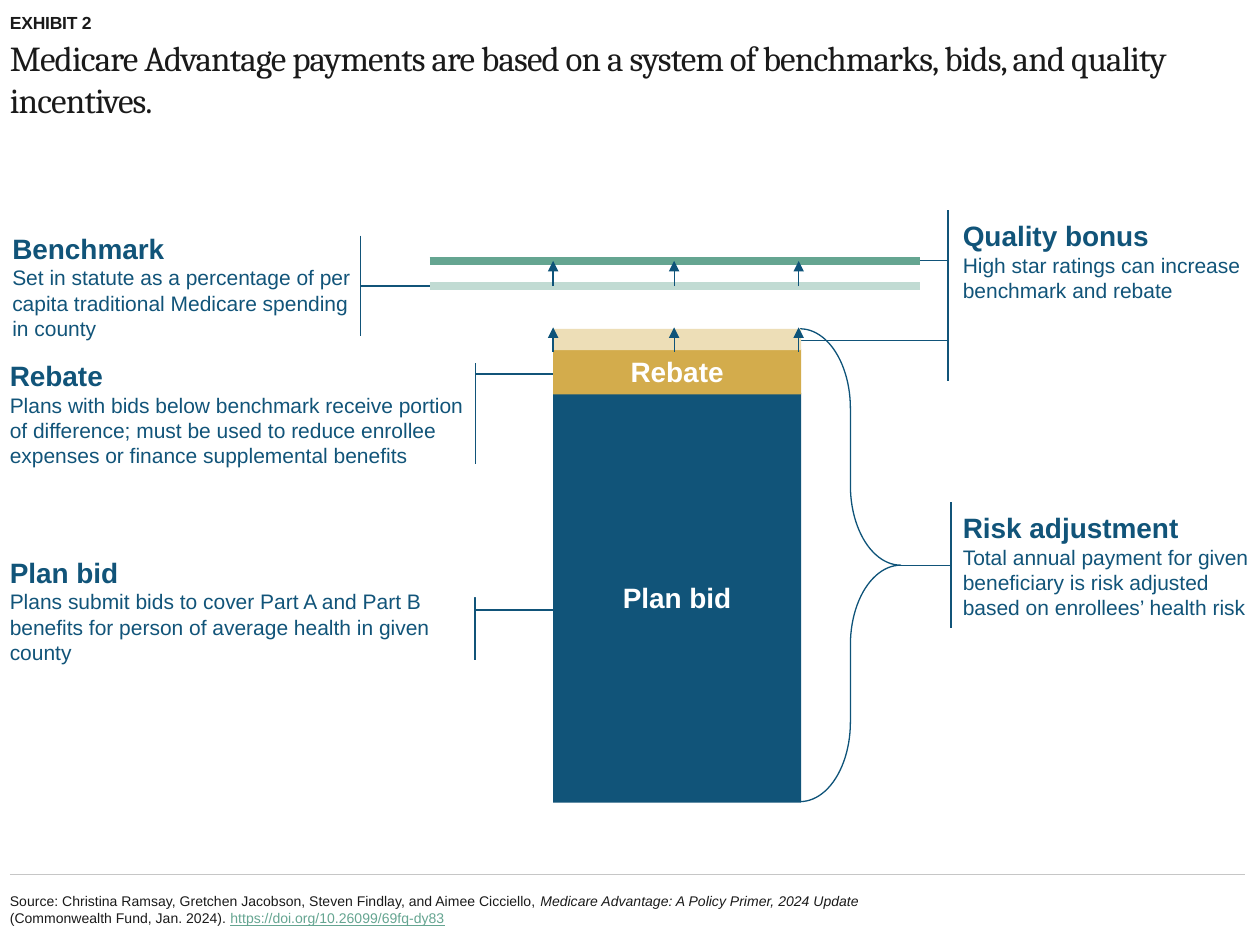
from dataclasses import dataclass
from typing import Optional

from pptx import Presentation
from pptx.dml.color import RGBColor
from pptx.enum.shapes import MSO_CONNECTOR, MSO_SHAPE
from pptx.enum.text import MSO_ANCHOR, MSO_AUTO_SIZE, PP_ALIGN
from pptx.oxml.ns import qn
from pptx.oxml.xmlchemy import OxmlElement
from pptx.util import Cm, Pt


@dataclass(frozen=True)
class Theme:
    sans: str = "Arial"
    serif: str = "Cambria"
    ink: str = "1A1A1A"
    navy: str = "115479"
    stroke: str = "0E5379"
    green: str = "65A591"
    pale_green: str = "C1DBD3"
    gold: str = "D3AC4C"
    pale_gold: str = "EDDEB7"
    white: str = "FFFFFF"
    rule: str = "C6C6C6"
    title_size: int = 20
    heading_size: int = 16
    text_size: int = 12
    exhibit_size: int = 10
    source_size: int = 8
    thin: float = 0.75
    thick: float = 4.5


THEME = Theme()


@dataclass(frozen=True)
class Area:
    left: float
    top: float
    width: float
    height: float

    def lengths(self) -> tuple:
        return Cm(self.left), Cm(self.top), Cm(self.width), Cm(self.height)


@dataclass(frozen=True)
class Callout:
    """Gap and reach are fractions of the width; leader is one of the height."""
    area: Area
    gap: float
    reach: float
    leader: float = 0.5
    on_left: bool = False
    heading: Optional[str] = None
    detail: str = ""


@dataclass(frozen=True)
class Block:
    area: Area
    color: str
    label: str = ""


COLUMN_LEFT, COLUMN_WIDTH = 11.15, 5.0
BENCHMARK_Y, BONUS_Y = 5.77, 5.26
ARROW_XS = (11.15, 13.59, 16.1)

CALLOUTS = [
    Callout(Area(0.2, 11.28, 9.02, 2.03), -0.04, -0.31, on_left=True,
            heading="Plan bid",
            detail="Plans submit bids to cover Part A and Part B benefits for "
                   "person of average health in given county"),
    Callout(Area(0.2, 7.32, 9.3, 2.03), -0.01, -0.25, 0.11, on_left=True,
            heading="Rebate",
            detail="Plans with bids below benchmark receive portion of difference; "
                   "must be used to reduce enrollee expenses or finance "
                   "supplemental benefits"),
    Callout(Area(19.41, 4.24, 5.94, 2.03), -0.05, -0.3,
            heading="Quality bonus",
            detail="High star ratings can increase benchmark and rebate"),
    Callout(Area(0.25, 4.75, 7.16, 2.03), 0.02, -0.3, on_left=True,
            heading="Benchmark",
            detail="Set in statute as a percentage of per capita traditional "
                   "Medicare spending in county"),
    Callout(Area(19.41, 10.13, 5.94, 2.54), -0.04, -0.22,
            heading="Risk adjustment",
            detail="Total annual payment for given beneficiary is risk adjusted "
                   "based on enrollees’ health risk"),
]
BONUS_REBATE_LEADER = Callout(Area(19.41, 6.05, 5.94, 1.63), -0.05, -0.55)

# The white block shortens the accent bar beside the plan bid text.
BLOCKS = [
    Block(Area(COLUMN_LEFT, 7.92, COLUMN_WIDTH, 8.26), THEME.navy, "Plan bid"),
    Block(Area(COLUMN_LEFT, 7.04, COLUMN_WIDTH, 0.91), THEME.gold, "Rebate"),
    Block(Area(8.99, 9.55, 1.35, 2.49), THEME.white),
]
BONUS_REBATE = Block(Area(COLUMN_LEFT, 6.63, COLUMN_WIDTH, 0.43), THEME.pale_gold)


def add_span(para, text: str, size: int, color: str, face: str = THEME.sans,
             bold: bool = False, italic: bool = False, underline: bool = False,
             spacing: int = 0) -> None:
    """Add one run; spacing is in hundredths of a point."""
    span = para.add_run()
    span.text = text
    font = span.font
    font.name, font.size = face, Pt(size)
    font.bold, font.italic, font.underline = bold, italic, underline
    font.color.rgb = RGBColor.from_string(color)
    if spacing:
        span.font._element.set("spc", str(spacing))


def prepare_frame(box, anchor: MSO_ANCHOR):
    frame = box.text_frame
    frame.word_wrap = True
    frame.auto_size = MSO_AUTO_SIZE.NONE
    frame.vertical_anchor = anchor
    frame.margin_left = frame.margin_top = frame.margin_right = frame.margin_bottom = 0
    return frame


def place(box, area: Area) -> None:
    box.left, box.top, box.width, box.height = area.lengths()


def add_outline(page, kind: MSO_SHAPE, area: Area, color: str,
                adjustments: tuple, flipped: bool):
    shape = page.shapes.add_shape(kind, *area.lengths())
    shape.shadow.inherit = False
    shape.fill.background()
    shape.line.color.rgb = RGBColor.from_string(color)
    shape.line.width = Pt(THEME.thin)
    for index, value in enumerate(adjustments):
        shape.adjustments[index] = value
    if flipped:
        shape.element.spPr.find(qn("a:xfrm")).set("flipH", "1")
    return shape


def add_callout(page, callout: Callout) -> None:
    shape = add_outline(page, MSO_SHAPE.LINE_CALLOUT_1_ACCENT_BAR, callout.area, THEME.navy,
                        (callout.leader, callout.gap, callout.leader, callout.reach),
                        callout.on_left)
    if callout.heading is None:
        return
    frame = prepare_frame(shape, MSO_ANCHOR.MIDDLE)
    heading, detail = frame.paragraphs[0], frame.add_paragraph()
    heading.alignment = detail.alignment = PP_ALIGN.LEFT
    add_span(heading, callout.heading, THEME.heading_size, THEME.navy, bold=True)
    add_span(detail, callout.detail, THEME.text_size, THEME.navy)


def add_block(page, block: Block) -> None:
    shape = page.shapes.add_shape(MSO_SHAPE.RECTANGLE, *block.area.lengths())
    shape.shadow.inherit = False
    shape.fill.solid()
    shape.fill.fore_color.rgb = RGBColor.from_string(block.color)
    shape.line.fill.background()
    if block.label:
        para = prepare_frame(shape, MSO_ANCHOR.MIDDLE).paragraphs[0]
        para.alignment = PP_ALIGN.CENTER
        add_span(para, block.label, THEME.heading_size, THEME.white, bold=True)


def add_line(page, start: tuple, end: tuple, color: str, width: float = THEME.thin,
             arrow: bool = False) -> None:
    line = page.shapes.add_connector(MSO_CONNECTOR.STRAIGHT,
                                     *(Cm(value) for value in start + end))
    line.line.color.rgb = RGBColor.from_string(color)
    line.line.width = Pt(width)
    properties = line.element.spPr
    if arrow:
        head = OxmlElement("a:tailEnd")
        head.set("type", "triangle")
        properties.find(qn("a:ln")).append(head)
    properties.append(OxmlElement("a:effectLst"))


def add_rise(page, bottom: float, top: float) -> None:
    """Draw the row of upward arrows between two heights."""
    for x in ARROW_XS:
        add_line(page, (x, bottom), (x, top), THEME.stroke, arrow=True)


def add_header(page) -> None:
    title, exhibit = page.shapes.title, page.placeholders[1]
    place(title, Area(0.2, 0.74, 24.89, 2.11))
    para = prepare_frame(title, MSO_ANCHOR.TOP).paragraphs[0]
    para.alignment = PP_ALIGN.LEFT
    add_span(para, "Medicare Advantage payments are based on a system of benchmarks, "
             "bids, and quality incentives.", THEME.title_size, THEME.ink,
             THEME.serif, spacing=-50)
    place(exhibit, Area(0.2, 0.13, 24.89, 0.53))
    para = prepare_frame(exhibit, MSO_ANCHOR.BOTTOM).paragraphs[0]
    para.space_before = Pt(0)
    properties = para._p.get_or_add_pPr()
    properties.set("marL", "0")
    properties.set("indent", "0")
    properties.append(OxmlElement("a:buNone"))
    add_span(para, "EXHIBIT 2", THEME.exhibit_size, THEME.ink, bold=True, spacing=-10)


def add_source(page) -> None:
    add_line(page, (0.2, 17.63), (25.1, 17.63), THEME.rule)
    box = page.shapes.add_textbox(*Area(0.2, 17.75, 17.48, 1.17).lengths())
    para = prepare_frame(box, MSO_ANCHOR.MIDDLE).paragraphs[0]
    size = THEME.source_size
    add_span(para, "Source: Christina Ramsay, Gretchen Jacobson, Steven Findlay, and "
             "Aimee Cicciello, ", size, THEME.ink)
    add_span(para, "Medicare Advantage: A Policy Primer, 2024 Update ", size,
             THEME.ink, italic=True)
    add_span(para, "(Commonwealth Fund, Jan. 2024). ", size, THEME.ink)
    add_span(para, "https://doi.org/10.26099/69fq-dy83", size, THEME.green, underline=True)


def main() -> None:
    deck = Presentation()
    deck.slide_width, deck.slide_height = Cm(25.4), Cm(19.05)
    page = deck.slides.add_slide(deck.slide_layouts[1])
    add_header(page)
    add_source(page)
    for callout in CALLOUTS:
        add_callout(page, callout)
    for block in BLOCKS:
        add_block(page, block)
    for y, color in ((BONUS_Y, THEME.green), (BENCHMARK_Y, THEME.pale_green)):
        add_line(page, (8.66, y), (18.54, y), color, THEME.thick)
    add_outline(page, MSO_SHAPE.LEFT_BRACE, Area(16.13, 6.63, 2.03, 9.53),
                THEME.stroke, (0.79, 0.5), True)
    add_rise(page, BENCHMARK_Y, BONUS_Y)
    add_callout(page, BONUS_REBATE_LEADER)
    add_block(page, BONUS_REBATE)
    add_rise(page, 7.09, 6.6)
    deck.save("out.pptx")


if __name__ == "__main__":
    main()
